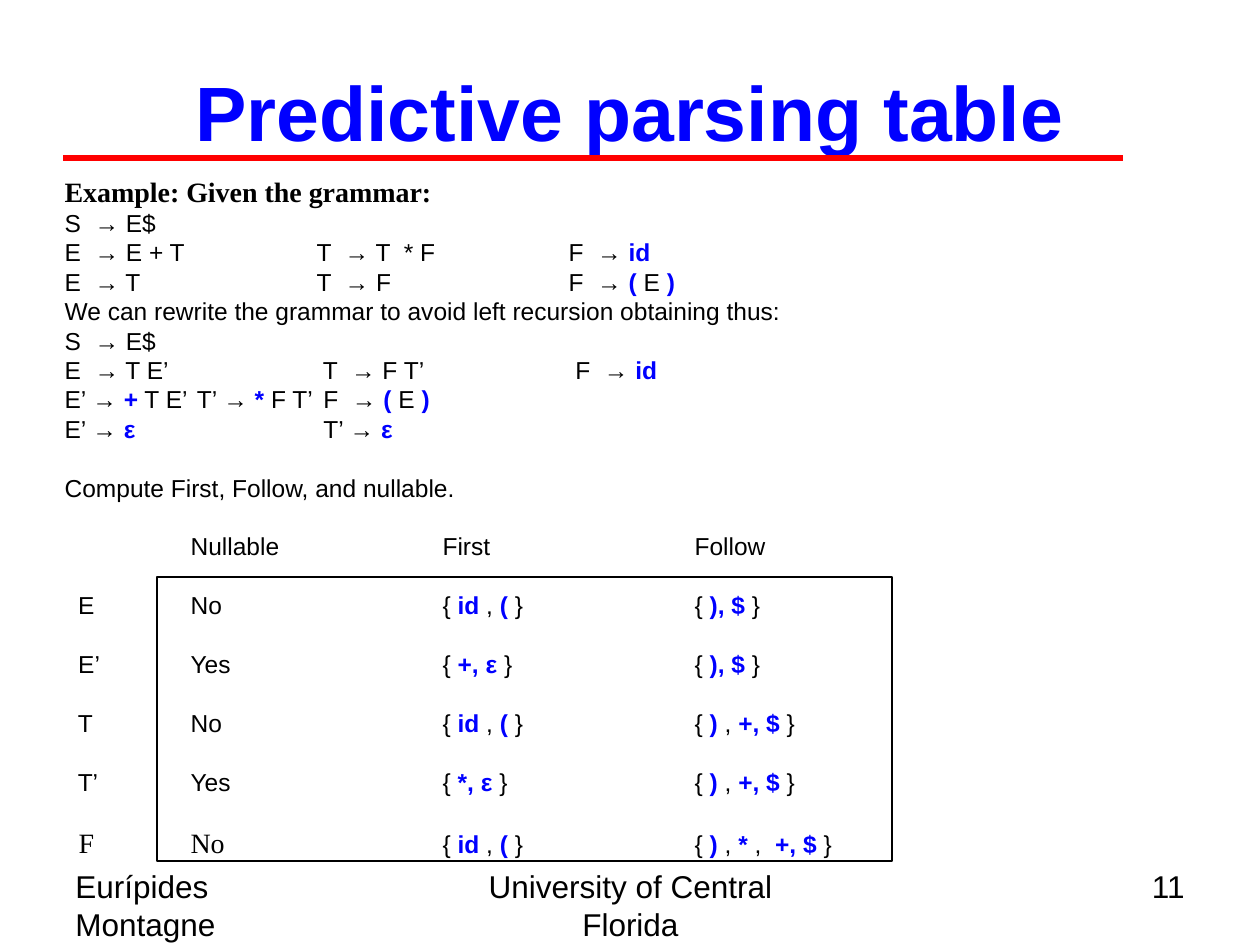
import dataclasses

import lxml.etree
import pptx
import pptx.dml.color
import pptx.enum.shapes
import pptx.enum.text
import pptx.oxml.ns
import pptx.util

qn = pptx.oxml.ns.qn
Pt = pptx.util.Pt
Align = pptx.enum.text.PP_ALIGN
Anchor = pptx.enum.text.MSO_ANCHOR


@dataclasses.dataclass(frozen=True)
class Theme:
    ink: str = "000000"
    blue: str = "0000FF"
    red: str = "FF0000"
    sans: str = "Arial"
    serif: str = "Times New Roman"
    title: int = 44
    foot: int = 18
    lead: int = 16
    body: int = 14
    pitch: float = 1.2
    tab: int = 126


THEME = Theme()


def px(n):
    return round(n * 914400 / 126)


def color(code):
    return pptx.dml.color.RGBColor.from_string(code)


def write(par, text, size=THEME.body, font=THEME.sans, ink=THEME.ink,
          bold=False, align=Align.LEFT, gap=0):
    par.alignment = align
    par.line_spacing = Pt(size * THEME.pitch)
    par.space_before = Pt(gap)
    par.space_after = Pt(0)
    for i, part in enumerate(text.split("|")):
        if not part:
            continue
        run = par.add_run()
        run.text = part
        mark = i % 2 == 1
        run.font.size = Pt(size)
        run.font.name = font
        run.font.bold = bold or mark
        run.font.color.rgb = color(THEME.blue if mark else ink)


class Deck:
    def __init__(self, theme):
        self.theme = theme
        self.file = pptx.Presentation()
        self.file.slide_width, self.file.slide_height = px(1260), px(945)
        self.slide = self.file.slides.add_slide(self.file.slide_layouts[1])

    def fit(self, shape, box, anchor):
        shape.left, shape.top, shape.width, shape.height = map(px, box)
        frame = shape.text_frame
        frame.word_wrap = True
        frame.auto_size = pptx.enum.text.MSO_AUTO_SIZE.NONE
        frame.vertical_anchor = anchor
        return frame

    def title(self, text, box):
        frame = self.fit(self.slide.shapes.title, box, Anchor.MIDDLE)
        write(frame.paragraphs[0], text, size=self.theme.title,
              ink=self.theme.blue, bold=True, align=Align.CENTER)

    def body(self, lines, box):
        frame = self.fit(self.slide.placeholders[1], box, Anchor.TOP)
        for i, (text, form) in enumerate(lines):
            par = frame.add_paragraph() if i else frame.paragraphs[0]
            write(par, text, **form)
            props = par._p.get_or_add_pPr()
            props.set("marL", "0")
            props.set("indent", "0")
            props.set("defTabSz", str(px(self.theme.tab)))
            lxml.etree.SubElement(props, qn("a:buNone"))
        return frame

    def note(self, text, box, align):
        shape = self.slide.shapes.add_textbox(0, 0, 0, 0)
        frame = self.fit(shape, box, Anchor.TOP)
        write(frame.paragraphs[0], text, size=self.theme.foot, align=align)

    def rule(self, left, right, top, width):
        line = self.slide.shapes.add_connector(
            pptx.enum.shapes.MSO_CONNECTOR.STRAIGHT,
            px(left), px(top), px(right), px(top))
        line.line.color.rgb = color(self.theme.red)
        line.line.width = Pt(width)
        lxml.etree.SubElement(line._element.spPr, qn("a:effectLst"))

    def frame(self, box, width):
        rect = self.slide.shapes.add_shape(
            pptx.enum.shapes.MSO_SHAPE.RECTANGLE, *map(px, box))
        rect.shadow.inherit = False
        rect.fill.background()
        rect.line.color.rgb = color(self.theme.ink)
        rect.line.width = Pt(width)


def main():
    deck = Deck(THEME)
    gap = dict(gap=THEME.body * THEME.pitch)
    lead = dict(size=THEME.lead, font=THEME.serif)

    lines = [("Example: Given the grammar:", dict(lead, bold=True))]
    lines += [(text, {}) for text in (
        "S  → E$",
        "E  → E + T\t\tT  → T  * F\t\tF  → |id|",
        "E  → T\t\tT  → F\t\tF  → |( |E |)|",
        "We can rewrite the grammar to avoid left recursion obtaining thus:",
        "S  → E$",
        "E  → T E’\t\t T  → F T’\t\t F  → |id|",
        "E’ → |+| T E’\t T’ → |*| F T’\t F  → |( |E |)|",
        "E’ → |ε|\t\t T’ → |ε|")]
    lines += [(text, gap) for text in (
        "Compute First, Follow, and nullable.",
        "\tNullable\t\tFirst\t\tFollow",
        "  E\tNo\t\t{ |id| , |(| }\t\t{ |), $| }",
        "  E’\tYes\t\t{ |+, ε| }\t\t{ |), $| }",
        "  T\tNo\t\t{ |id| , |( |}\t\t{ |)| , |+, $| }",
        "  T’\tYes\t\t{ |*, ε| }\t\t{ |)| , |+, $| }")]
    lines.append(("  F\tNo\t\t", dict(lead, **gap)))

    for text, left, width, align in (
            ("Eurípides Montagne", 63, 294, Align.LEFT),
            ("University of Central Florida", 431, 399, Align.CENTER),
            ("11", 903, 294, Align.RIGHT)):
        deck.note(text, (left, 861, width, 66), align)
    deck.title("Predictive parsing table", (63, 32, 1134, 158))
    deck.rule(63, 1123, 158, 3)
    body = deck.body(lines, (52, 168, 1029, 772))
    last = body.paragraphs[-1]
    write(last, "{ |id| , |(| }\t\t{ |)| , |*| ,  |+, $| }", **gap)
    last.line_spacing = Pt(THEME.lead * THEME.pitch)
    deck.frame((157, 577, 735, 284), 0.75)
    deck.file.save("out.pptx")


if __name__ == "__main__":
    main()
